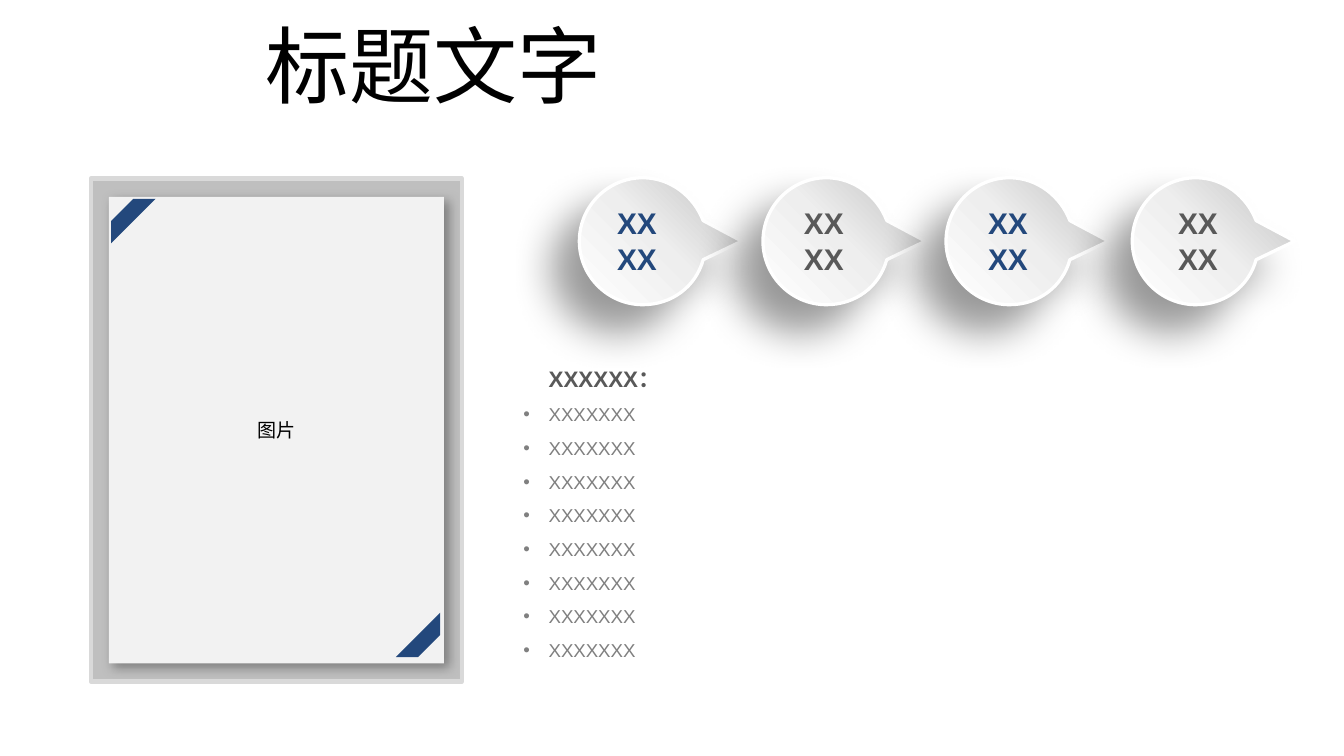
from copy import deepcopy

from lxml import etree
from pptx import Presentation
from pptx import util as u
from pptx.dml.color import RGBColor
from pptx.enum import shapes, text
from pptx.oxml.ns import qn

Cm, Pt = u.Cm, u.Pt

NAVY = RGBColor(0x23, 0x48, 0x7C)
BLACK = RGBColor(0, 0, 0)
DARK = RGBColor(0x59, 0x59, 0x59)
GREY = RGBColor(0x80, 0x80, 0x80)
SILVER = RGBColor(0xBF, 0xBF, 0xBF)
LIGHT = RGBColor(0xD9, 0xD9, 0xD9)
MIST = RGBColor(0xEE, 0xEE, 0xEE)
PAPER = RGBColor(0xF2, 0xF2, 0xF2)
WHITE = RGBColor(0xFF, 0xFF, 0xFF)

FONT = "Arial"
TITLE_FONT = "DejaVu Sans"


def add_run(p, content, size, color, bold=False, font=FONT):
    r = p.add_run()
    r.text = content
    r.font.size, r.font.bold, r.font.name = Pt(size), bold, font
    r.font.color.rgb = color


def add_shadow(sp, color, alpha, blur, dist, angle):
    """Blur and distance are in points, alpha in percent."""
    sp.shadow.inherit = False
    effects = sp._element.spPr.find(qn("a:effectLst"))
    shadow = etree.SubElement(
        effects, qn("a:outerShdw"), blurRad=str(Pt(blur)), dist=str(Pt(dist)),
        dir=str(angle * 60000), algn="ctr", rotWithShape="0")
    clr = etree.SubElement(shadow, qn("a:srgbClr"), val=str(color))
    etree.SubElement(clr, qn("a:alpha"), val=str(alpha * 1000))


def add_block(parent, kind, x, y, w, h, color):
    sp = parent.shapes.add_shape(kind, Cm(x), Cm(y), Cm(w), Cm(h))
    if kind == shapes.MSO_SHAPE.ROUNDED_RECTANGLE:
        sp.adjustments[0] = 0
    sp.shadow.inherit = False
    sp.fill.solid()
    sp.fill.fore_color.rgb = color
    sp.line.fill.background()
    return sp


def add_text_box(parent, x, y, w, h):
    tf = parent.shapes.add_textbox(Cm(x), Cm(y), Cm(w), Cm(h)).text_frame
    tf.word_wrap = True
    tf.margin_left = tf.margin_right = tf.margin_top = tf.margin_bottom = 0
    return tf


def add_title(s, x, y, w, h):
    title = s.shapes.title
    title.left, title.top, title.width, title.height = Cm(x), Cm(y), Cm(w), Cm(h)
    tf = title.text_frame
    tf.auto_size = text.MSO_AUTO_SIZE.NONE
    tf.vertical_anchor = text.MSO_ANCHOR.MIDDLE
    p = tf.paragraphs[0]
    p.alignment = text.PP_ALIGN.CENTER
    add_run(p, "标题文字", 45, BLACK, font=TITLE_FONT)


def add_photo_frame(s, x, y, w, h):
    rect = shapes.MSO_SHAPE.ROUNDED_RECTANGLE
    stripe = shapes.MSO_SHAPE.DIAGONAL_STRIPE
    border = 0.34
    group = s.shapes.add_group_shape()
    frame = add_block(group, rect, x, y, w, h, SILVER)
    frame.line.color.rgb = LIGHT
    frame.line.width = Pt(2.5)

    card = add_block(group, rect, x + border, y + border,
                     w - 2 * border, h - 2 * border, PAPER)
    add_shadow(card, DARK, 64, 6, 3, 45)
    tf = card.text_frame
    tf.vertical_anchor = text.MSO_ANCHOR.MIDDLE
    p = tf.paragraphs[0]
    p.alignment = text.PP_ALIGN.CENTER
    add_run(p, "图片", 10.2, BLACK)

    side = 0.84
    add_block(s, stripe, x + 0.38, y + 0.38, side, side, NAVY)
    corner = add_block(s, stripe, x + w - 0.41 - side, y + h - 0.46 - side,
                       side, side, NAVY)
    corner.rotation = 180


def build_bubble_outline(group, x, y, w, h):
    """Circle with a tip on the right; each segment is a line or a curve."""
    r, k = h / 2, 0.55 * h / 2
    neck = 2.34
    segments = [
        [(1.73, 0), (2.17, 0.36), (neck, 0.81)],
        [(w, r)],
        [(neck, 1.55)],
        [(2.2, 2.06), (1.75, h), (r, h)],
        [(r - k, h), (0, r + k), (0, r)],
        [(0, r - k), (r - k, 0), (r, 0)],
    ]
    builder = group.shapes.build_freeform(Cm(x + r), Cm(y))
    ends = [(Cm(x + seg[-1][0]), Cm(y + seg[-1][1])) for seg in segments]
    builder.add_line_segments(ends, close=True)
    bubble = builder.convert_to_shape()
    lines = list(bubble._element.iter(qn("a:lnTo")))
    for line, seg in zip(lines, segments):
        if len(seg) == 3:
            curve = etree.Element(qn("a:cubicBezTo"))
            for px, py in seg:
                etree.SubElement(curve, qn("a:pt"), x=str(Cm(px)), y=str(Cm(py)))
            line.getparent().replace(line, curve)
    return bubble


def add_bubble(s, x, y, w, h, label_dx, label_w, color):
    group = s.shapes.add_group_shape()
    bubble = build_bubble_outline(group, x, y, w, h)
    bubble.fill.gradient()
    bubble.fill.gradient_angle = 225
    stop_list = bubble._element.spPr.find(".//" + qn("a:gsLst"))
    stop_list.append(deepcopy(stop_list[0]))
    colors = ((0, SILVER), (0.5, MIST), (1, WHITE))
    for stop, (position, stop_color) in zip(bubble.fill.gradient_stops, colors):
        stop.position = position
        stop.color.rgb = stop_color
    bubble.line.color.rgb = WHITE
    bubble.line.width = Pt(1.75)
    add_shadow(bubble, BLACK, 40, 22, 20, 135)

    tf = add_text_box(group, x + label_dx, y + 0.51, label_w, 1.37)
    for p in (tf.paragraphs[0], tf.add_paragraph()):
        p.alignment = text.PP_ALIGN.CENTER
        add_run(p, "XX", 16, color, bold=True)


def add_bubble_row(s, x, y):
    bubbles = ((0, 0.15, 1.88, NAVY), (3.47, 0.21, 1.88, DARK),
               (6.93, 0, 2.34, NAVY), (10.45, 0.3, 1.88, DARK))
    for dx, label_dx, label_w, color in bubbles:
        add_bubble(s, x + dx, y, 3.07, 2.4, label_dx, label_w, color)


def add_bullet_list(s, x, y, w, h, heading, items):
    tf = add_text_box(s, x, y, w, h)
    indent = Cm(0.48)
    for i, content in enumerate([heading] + items):
        p = tf.add_paragraph() if i else tf.paragraphs[0]
        p.alignment = text.PP_ALIGN.JUSTIFY
        p.line_spacing = 1.5
        p_pr = p._p.get_or_add_pPr()
        p_pr.set("marL", str(indent))
        if i:
            p_pr.set("indent", str(-indent))
            etree.SubElement(p_pr, qn("a:buFont"), typeface=FONT)
            etree.SubElement(p_pr, qn("a:buChar"), char="•")
            add_run(p, content, 10, GREY)
        else:
            add_run(p, content, 12, DARK, bold=True)


def main():
    prs = Presentation()
    prs.slide_width, prs.slide_height = Cm(25.4), Cm(14.29)
    s = prs.slides.add_slide(prs.slide_layouts[5])
    add_photo_frame(s, 1.72, 3.38, 7.01, 9.5)
    add_title(s, 0, 0.76, 16.38, 0.91)
    add_bullet_list(s, 9.89, 6.65, 15.01, 5.89, "XXXXXX：", ["XXXXXXX"] * 8)
    add_bubble_row(s, 10.95, 3.36)
    prs.save("out.pptx")


if __name__ == "__main__":
    main()
